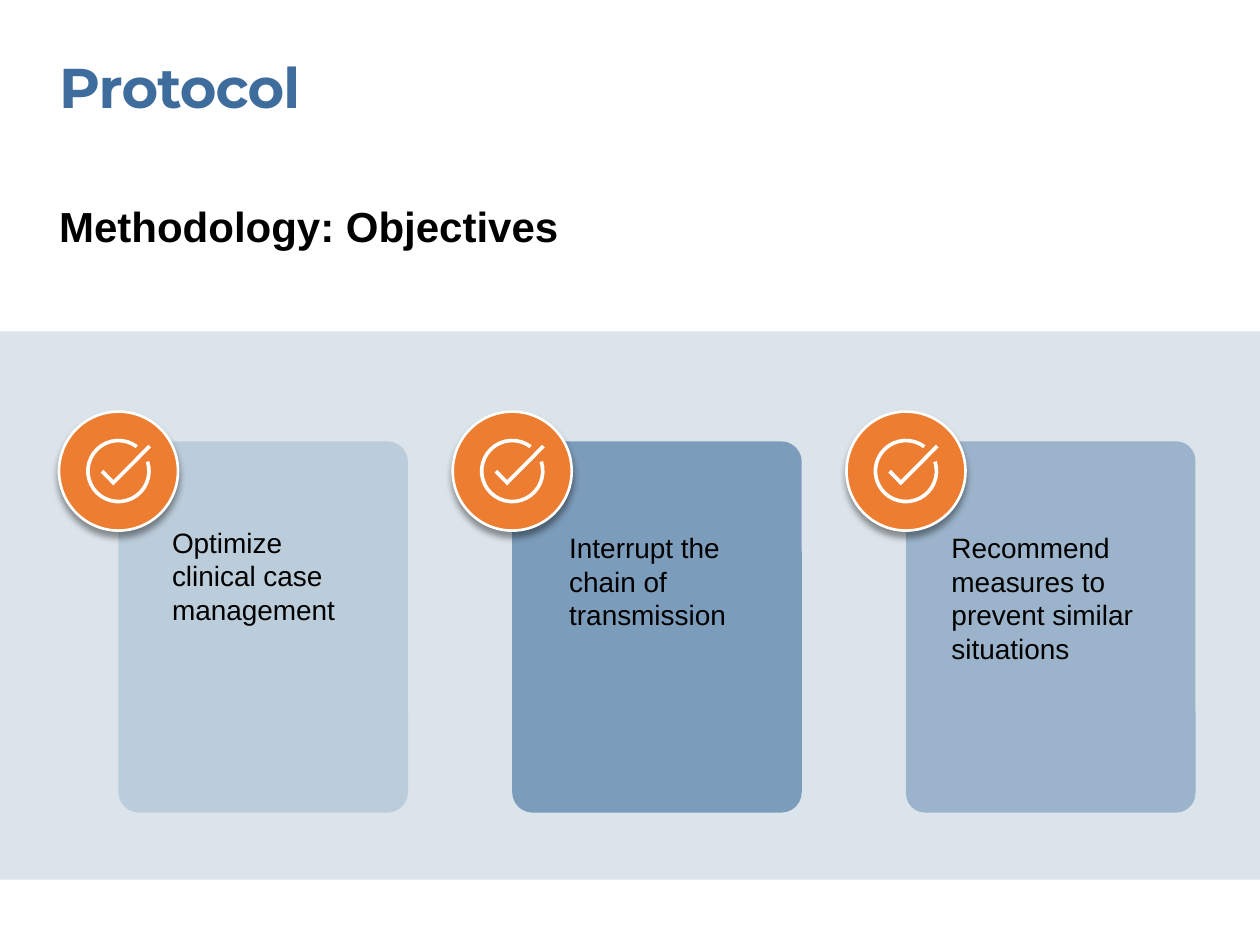
from math import cos, radians, sin, tan

from lxml.etree import SubElement
from pptx import Presentation
from pptx.dml.color import RGBColor
from pptx.enum.shapes import MSO_SHAPE as Shape
from pptx.oxml.ns import qn
from pptx.util import Pt

COLORS = {
    "blue": "3D6C9D",
    "band": "DBE4EA",
    "orange": "ED7D31",
    "white": "FFFFFF",
    "black": "000000",
}

# text, text left, text top, text width, text height, card opacity %, card corner
OBJECTIVES = [
    ("Optimize clinical case management", 98.3, 300.2, 113.8, 58.3, 20, 0.071),
    ("Interrupt the chain of transmission", 325.3, 303.1, 113, 58.3, 60, 0.071),
    ("Recommend measures to prevent similar situations", 543.7, 303.1, 121, 77.8, 40, 0.067),
]

FIRST_LEFT, PITCH = 67.7, 225
CARD_TOP, CARD_WIDTH, CARD_HEIGHT = 252.2, 165.5, 212.2
BADGE_CENTER_Y, BADGE_SIZE = 269.2, 68
RING_OUTER, RING_INNER = 18.5, 16.4
RING_START, RING_END = -18, 307
ARC_CURVES = 8
# offsets from the badge centre
TICK = [(-2.9, 8.2), (-10.1, 0.9), (-8.6, -0.7), (-2.9, 5.1), (17.1, -15), (18.6, -13.5)]


def color(name):
    return RGBColor.from_string(COLORS[name])


def paint(shape, fill, opacity=100):
    shape.shadow.inherit = False
    shape.fill.solid()
    shape.fill.fore_color.rgb = color(fill)
    shape.line.fill.background()
    if opacity < 100:
        rgb = shape._element.spPr.find(qn("a:solidFill")).find(qn("a:srgbClr"))
        SubElement(rgb, qn("a:alpha"), val=str(opacity * 1000))


def add_shape(slide, kind, left, top, width, height, fill, opacity=100):
    shape = slide.shapes.add_shape(kind, Pt(left), Pt(top), Pt(width), Pt(height))
    paint(shape, fill, opacity)
    return shape


def add_text(slide, text, left, top, width, height, size, font="Arial",
             fill="black", bold=False):
    box = slide.shapes.add_textbox(Pt(left), Pt(top), Pt(width), Pt(height))
    frame = box.text_frame
    frame.word_wrap = True
    frame.margin_left = frame.margin_right = frame.margin_top = frame.margin_bottom = 0
    run = frame.paragraphs[0].add_run()
    run.text = text
    run.font.name = font
    run.font.size = Pt(size)
    run.font.bold = bold
    run.font.color.rgb = color(fill)
    return run


def add_badge(slide, center_x):
    half = BADGE_SIZE / 2
    badge = add_shape(slide, Shape.OVAL, center_x - half, BADGE_CENTER_Y - half,
                      BADGE_SIZE, BADGE_SIZE, "orange")
    badge.line.color.rgb = color("white")
    badge.line.width = Pt(1.5)
    effects = badge._element.spPr.find(qn("a:effectLst"))
    shadow = SubElement(effects, qn("a:outerShdw"), blurRad=str(Pt(4)), dist=str(Pt(3)),
                        dir=str(90 * 60000), algn="ctr", rotWithShape="0")
    rgb = SubElement(shadow, qn("a:srgbClr"), val=COLORS["black"])
    SubElement(rgb, qn("a:alpha"), val="40000")


def arc(radius, start, end):
    """Return the start point, then two handles and an end point for each curve."""
    step = radians(end - start) / ARC_CURVES
    handle = 4 / 3 * tan(step / 4)
    points = [(radius * cos(radians(start)), radius * sin(radians(start)))]
    for index in range(ARC_CURVES):
        first = radians(start) + step * index
        for angle, pull in ((first, handle), (first + step, -handle), (first + step, 0)):
            points.append((radius * (cos(angle) - pull * sin(angle)),
                           radius * (sin(angle) + pull * cos(angle))))
    return points


def bend(lines):
    """Turn each three line segments into one cubic curve."""
    for first, second, third in zip(lines[::3], lines[1::3], lines[2::3]):
        curve = first.makeelement(qn("a:cubicBezTo"))
        first.addprevious(curve)
        for line in (first, second, third):
            curve.append(line[0])
            line.getparent().remove(line)


def add_check_icon(slide, center_x):
    """Draw an open ring and a tick as one outline."""
    ring = arc(RING_OUTER, RING_START, RING_END) + arc(RING_INNER, RING_END, RING_START)
    ring, tick = [[(Pt(center_x + x), Pt(BADGE_CENTER_Y + y)) for x, y in contour]
                  for contour in (ring, TICK)]
    builder = slide.shapes.build_freeform(*ring[0])
    builder.add_line_segments(ring[1:])
    builder.move_to(*tick[0])
    builder.add_line_segments(tick[1:])
    icon = builder.convert_to_shape()
    paint(icon, "white")
    lines = list(icon._element.iter(qn("a:lnTo")))
    count = 3 * ARC_CURVES
    bend(lines[:count])
    bend(lines[count + 1:2 * count + 1])


def main():
    presentation = Presentation()
    presentation.slide_width, presentation.slide_height = Pt(720), Pt(540)
    slide = presentation.slides.add_slide(presentation.slide_layouts[6])

    add_shape(slide, Shape.RECTANGLE, 0, 189.4, 720, 313.2, "band")
    title = add_text(slide, "Protocol", 33.8, 30.2, 615.6, 39, 32, "Montserrat",
                     "blue", bold=True)
    title.font._element.set("spc", "-50")
    add_text(slide, "Methodology: Objectives", 33.8, 114.5, 438.5, 28.8, 24, bold=True)

    lefts = [FIRST_LEFT + PITCH * i for i in range(len(OBJECTIVES))]
    cards = list(zip(lefts, OBJECTIVES))
    for left, (*_, opacity, corner) in reversed(cards):
        card = add_shape(slide, Shape.ROUNDED_RECTANGLE, left, CARD_TOP,
                         CARD_WIDTH, CARD_HEIGHT, "blue", opacity)
        card.adjustments[0] = corner
    for left in lefts:
        add_badge(slide, left)
    for text, *place, _, _ in reversed(OBJECTIVES):
        add_text(slide, text, *place, 16)
    for left in lefts:
        add_check_icon(slide, left)

    presentation.save("out.pptx")


if __name__ == "__main__":
    main()
